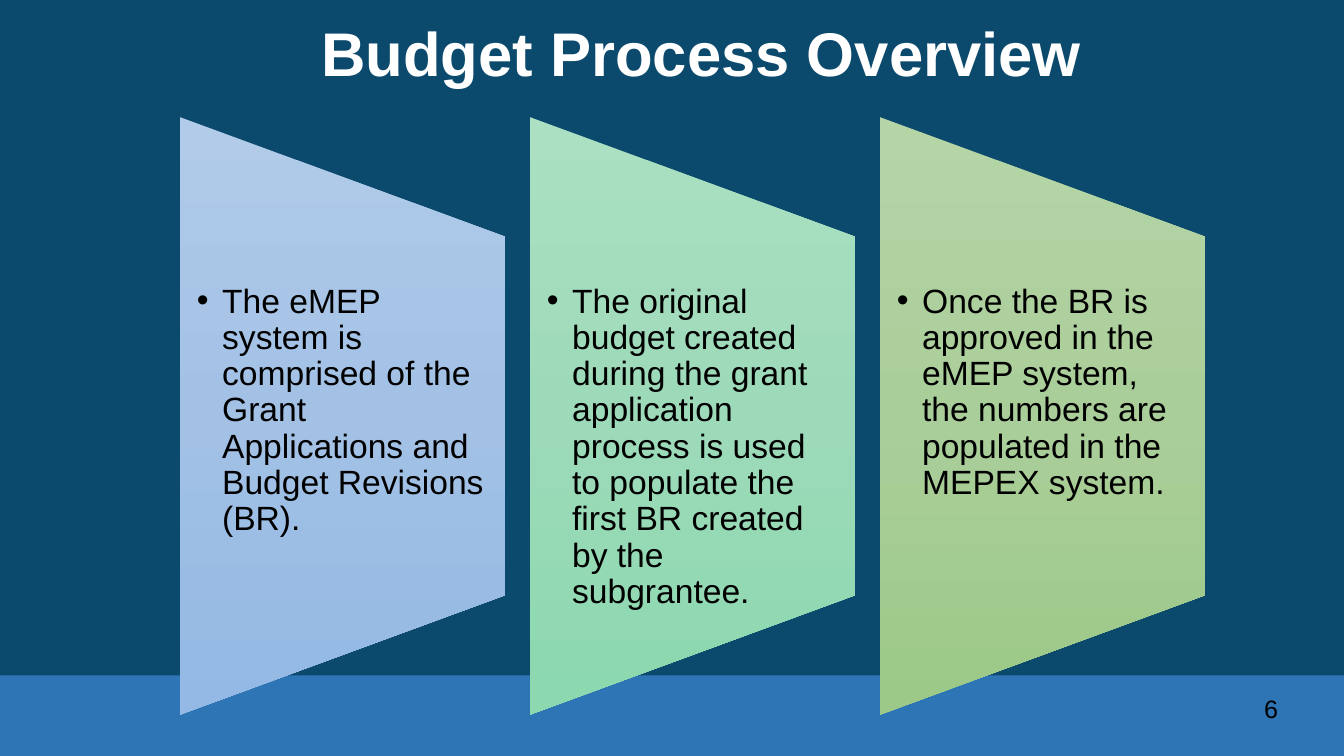
from dataclasses import dataclass
from lxml.etree import SubElement
from pptx import Presentation
from pptx.dml.color import RGBColor
from pptx.enum.shapes import MSO_SHAPE as Preset
from pptx.enum.text import MSO_ANCHOR as Anchor, MSO_AUTO_SIZE as AutoSize, PP_ALIGN as Align
from pptx.oxml.ns import qn
from pptx.util import Cm, Pt

TITLE = "Budget Process Overview"
PAGE_NUMBER = "6"
STEPS = [
    ("The eMEP system is comprised of the Grant Applications and Budget Revisions (BR).",
     ("B1CBE9", "A3C1E5", "93B9E4")),
    ("The original budget created during the grant application process is used to populate "
     "the first BR created by the subgrantee.",
     ("ABE0C3", "9DDAB9", "8CD8AF")),
    ("Once the BR is approved in the eMEP system, the numbers are populated in the MEPEX system.",
     ("B5D5A7", "AACE9A", "9CC987")),
]


@dataclass(frozen=True)
class Theme:
    font: str = "Arial"
    background: str = "0C4A6D"
    band: str = "2E75B6"
    light: str = "FFFFFF"
    dark: str = "000000"
    title_size: int = 44
    body_size: int = 24
    number_size: int = 18


THEME = Theme()
PAGE_WIDTH, PAGE_HEIGHT = Cm(33.87), Cm(19.05)
BAND_HEIGHT = Cm(2.03)
PANEL_LEFT, PANEL_TOP, PANEL_PITCH = Cm(4.53), Cm(2.95), Cm(8.82)
PANEL_WIDTH, PANEL_HEIGHT = Cm(8.2), Cm(15.06)
TEXT_TOP, TEXT_HEIGHT = Cm(7.16), Cm(7.82)
TEXT_INSET, BULLET_INDENT = Cm(0.43), Cm(0.64)


def color(code):
    return RGBColor.from_string(code)


def add_span(para, text, size, code, bold=False):
    span = para.add_run()
    span.text = text
    span.font.name = THEME.font
    span.font.size = Pt(size)
    span.font.bold = bold
    span.font.color.rgb = color(code)


def add_panel(page, left, shades):
    panel = page.shapes.add_shape(
        Preset.FLOWCHART_MANUAL_OPERATION,
        left + (PANEL_WIDTH - PANEL_HEIGHT) // 2, PANEL_TOP + (PANEL_HEIGHT - PANEL_WIDTH) // 2,
        PANEL_HEIGHT, PANEL_WIDTH)
    panel.rotation = 270
    panel.shadow.inherit = False
    panel.line.fill.background()
    panel.fill.gradient()
    panel.fill.gradient_angle = 180
    stops = panel.fill._fill._gradFill.find(qn("a:gsLst"))
    stops.clear()
    for index, shade in enumerate(shades):
        stop = SubElement(stops, qn("a:gs"), pos=str(index * 50000))
        SubElement(stop, qn("a:srgbClr"), val=shade)


def add_step_text(page, left, text):
    box = page.shapes.add_textbox(left, TEXT_TOP, PANEL_WIDTH, TEXT_HEIGHT)
    frame = box.text_frame
    frame.word_wrap = True
    frame.margin_left = frame.margin_right = TEXT_INSET
    frame.margin_top = frame.margin_bottom = 0
    para = frame.paragraphs[0]
    para.line_spacing = 0.9
    properties = para._p.get_or_add_pPr()
    properties.set("marL", str(BULLET_INDENT))
    properties.set("indent", str(-BULLET_INDENT))
    SubElement(properties, qn("a:buFont"), typeface=THEME.font)
    SubElement(properties, qn("a:buChar"), char="•")
    add_span(para, text, THEME.body_size, THEME.dark)


def add_title(page):
    title = page.shapes.title
    title.left, title.top, title.width, title.height = Cm(4.98), Cm(-0.1), Cm(25.4), Cm(3.05)
    frame = title.text_frame
    frame.word_wrap = True
    frame.auto_size = AutoSize.NONE
    frame.vertical_anchor = Anchor.MIDDLE
    para = frame.paragraphs[0]
    para.alignment = Align.CENTER
    para.line_spacing = 0.9
    add_span(para, TITLE, THEME.title_size, THEME.light, bold=True)


def add_band(page):
    band = page.shapes.add_shape(
        Preset.RECTANGLE, 0, PAGE_HEIGHT - BAND_HEIGHT, PAGE_WIDTH, BAND_HEIGHT)
    band.shadow.inherit = False
    band.fill.solid()
    band.fill.fore_color.rgb = color(THEME.band)
    band.line.fill.background()


def add_page_number(page):
    box = page.shapes.add_textbox(Cm(26.26), Cm(17.35), Cm(6.2), Cm(1.27))
    box.text_frame.word_wrap = True
    para = box.text_frame.paragraphs[0]
    para.alignment = Align.RIGHT
    add_span(para, PAGE_NUMBER, THEME.number_size, THEME.dark)


def main():
    deck = Presentation()
    deck.slide_width, deck.slide_height = PAGE_WIDTH, PAGE_HEIGHT
    page = deck.slides.add_slide(deck.slide_layouts[5])
    page.background.fill.solid()
    page.background.fill.fore_color.rgb = color(THEME.background)
    add_band(page)
    add_title(page)
    add_page_number(page)
    for index, (text, shades) in enumerate(STEPS):
        left = PANEL_LEFT + index * PANEL_PITCH
        add_panel(page, left, shades)
        add_step_text(page, left, text)
    deck.save("out.pptx")


if __name__ == "__main__":
    main()
